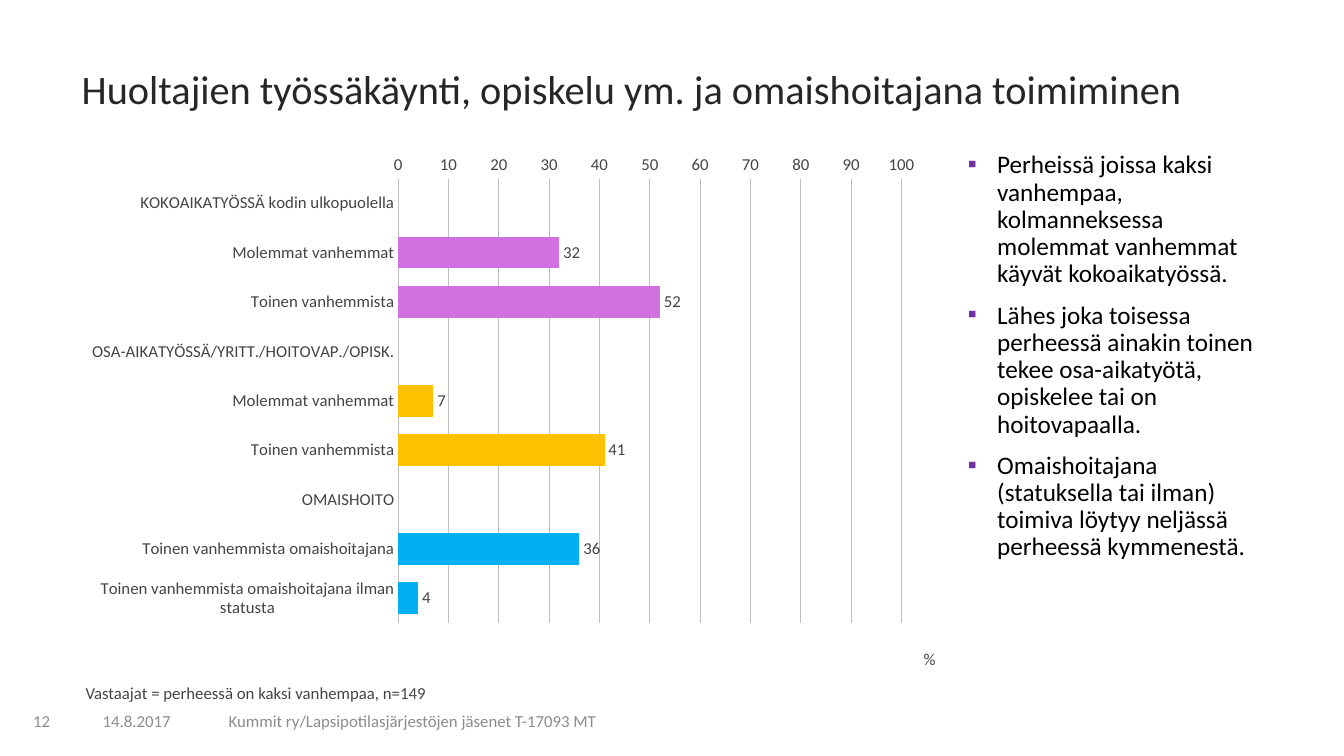
import pptx
import pptx.chart.data
import pptx.dml.color
import pptx.enum.chart
import pptx.enum.text
import pptx.oxml
import pptx.oxml.ns
import pptx.util
from pptx.util import Inches

FONT = "Calibri"
GREY, FOOTER_GREY, BLACK = "444444", "8C8C8C", "000000"
PURPLE, ORCHID, AMBER, BLUE = "7030A0", "D070E1", "FFC000", "00B0F0"
TOP, MIDDLE = pptx.enum.text.MSO_ANCHOR.TOP, pptx.enum.text.MSO_ANCHOR.MIDDLE

# label, percentage, bar colour
ANSWERS = [
    ("KOKOAIKATYÖSSÄ kodin ulkopuolella", None, None),
    ("Molemmat vanhemmat", 32, ORCHID),
    ("Toinen vanhemmista", 52, ORCHID),
    ("OSA-AIKATYÖSSÄ/YRITT./HOITOVAP./OPISK.", None, None),
    ("Molemmat vanhemmat", 7, AMBER),
    ("Toinen vanhemmista", 41, AMBER),
    ("OMAISHOITO", None, None),
    ("Toinen vanhemmista omaishoitajana", 36, BLUE),
    ("Toinen vanhemmista omaishoitajana ilman statusta", 4, BLUE),
]
FINDINGS = [
    "Perheissä joissa kaksi vanhempaa, kolmanneksessa molemmat vanhemmat "
    "käyvät kokoaikatyössä.",
    "Lähes joka toisessa perheessä ainakin toinen tekee osa-aikatyötä, "
    "opiskelee tai on hoitovapaalla.",
    "Omaishoitajana (statuksella tai ilman) toimiva löytyy neljässä "
    "perheessä kymmenestä.",
]


def rgb(color):
    return pptx.dml.color.RGBColor.from_string(color)


def set_font(font, size=12, color=GREY):
    font.name, font.size, font.bold = FONT, pptx.util.Pt(size), False
    font.color.rgb = rgb(color)


def add_bullet(paragraph, color):
    properties = paragraph._p.get_or_add_pPr()
    properties.set("marL", str(Inches(0.29)))
    properties.set("indent", str(-Inches(0.29)))
    ns = pptx.oxml.ns.nsdecls("a")
    for xml in (
        f'<a:buClr {ns}><a:srgbClr val="{color}"/></a:buClr>',
        f'<a:buFont {ns} typeface="{FONT}"/>',
        f'<a:buChar {ns} char="▪"/>',
    ):
        properties.append(pptx.oxml.parse_xml(xml))


def write(shape, *texts, size=12, color=GREY, anchor=TOP, spacing=0.9,
          gap=0, bullet=None):
    """Fill a shape with one formatted paragraph per text."""
    frame = shape.text_frame
    frame.word_wrap = True
    frame.auto_size = pptx.enum.text.MSO_AUTO_SIZE.NONE
    frame.vertical_anchor = anchor
    for index, text in enumerate(texts):
        paragraph = frame.add_paragraph() if index else frame.paragraphs[0]
        if bullet:
            add_bullet(paragraph, bullet)
        paragraph.alignment = pptx.enum.text.PP_ALIGN.LEFT
        paragraph.line_spacing = spacing
        paragraph.space_before = pptx.util.Pt(gap if index else 0)
        run = paragraph.add_run()
        run.text = text
        set_font(run.font, size, color)


def place(shape, left, top, width, height):
    shape.left, shape.top = Inches(left), Inches(top)
    shape.width, shape.height = Inches(width), Inches(height)
    return shape


def add_label(slide, box, text, **text_format):
    label = slide.shapes.add_textbox(*map(Inches, box))
    write(label, text, **text_format)


def set_layout(element, target=None, **fractions):
    """Fix the position of a chart part as fractions of the chart."""
    layout = element.find(pptx.oxml.ns.qn("c:layout"))
    if layout is not None:
        position = element.index(layout)
        element.remove(layout)
    else:
        position = 0
    parts = f'<c:layoutTarget val="{target}"/>' if target else ""
    parts += '<c:xMode val="edge"/><c:yMode val="edge"/>'
    parts += "".join(f'<c:{key} val="{value}"/>' for key, value in fractions.items())
    element.insert(position, pptx.oxml.parse_xml(
        f'<c:layout {pptx.oxml.ns.nsdecls("c")}>'
        f"<c:manualLayout>{parts}</c:manualLayout></c:layout>"))


def style_axis(axis):
    axis.major_tick_mark = pptx.enum.chart.XL_TICK_MARK.NONE
    axis.minor_tick_mark = pptx.enum.chart.XL_TICK_MARK.NONE
    axis.format.line.fill.background()
    set_font(axis.tick_labels.font)


def style_percent_axis(axis):
    style_axis(axis)
    axis.minimum_scale, axis.maximum_scale, axis.major_unit = 0, 100, 10
    axis.has_major_gridlines = True
    gridline = axis.major_gridlines.format.line
    gridline.color.rgb = rgb("BCBEC0")
    gridline.width = pptx.util.Pt(0.5)
    paragraph = axis.axis_title.text_frame.paragraphs[0]
    unit = paragraph.add_run()
    unit.text = "%"
    set_font(unit.font)
    set_layout(axis.axis_title._element, x=0.98, y=0.95)


def style_bars(plot):
    plot.gap_width = 55
    plot.vary_by_categories = False
    bars = plot.series[0]
    bars.invert_if_negative = False
    bars.format.fill.solid()
    bars.format.fill.fore_color.rgb = rgb(ORCHID)
    for index, (_, _, color) in enumerate(ANSWERS):
        if color in (AMBER, BLUE):
            fill = bars.points[index].format.fill
            fill.solid()
            fill.fore_color.rgb = rgb(color)
    labels = bars.data_labels
    labels.show_value = True
    labels.number_format, labels.number_format_is_linked = "#,##0", False
    labels.position = pptx.enum.chart.XL_LABEL_POSITION.OUTSIDE_END
    set_font(labels.font)


def add_answer_chart(slide, box):
    data = pptx.chart.data.CategoryChartData()
    data.categories = [label for label, _, _ in ANSWERS]
    data.add_series("Series 1", [value for _, value, _ in ANSWERS])
    chart = slide.shapes.add_chart(
        pptx.enum.chart.XL_CHART_TYPE.BAR_CLUSTERED, *map(Inches, box), data).chart
    chart.has_legend = False
    chart.has_title = False
    set_font(chart.font, color=BLACK)
    style_axis(chart.category_axis)
    chart.category_axis.reverse_order = True
    chart.category_axis.crosses = pptx.enum.chart.XL_AXIS_CROSSES.MAXIMUM
    style_percent_axis(chart.value_axis)
    style_bars(chart.plots[0])
    plot_area = chart._chartSpace.chart.plotArea
    set_layout(plot_area, target="inner", x=0.377, y=0.06, w=0.581, h=0.849)


def main():
    presentation = pptx.Presentation()
    presentation.slide_width = Inches(13.33)
    presentation.slide_height = Inches(7.5)
    slide = presentation.slides.add_slide(presentation.slide_layouts[1])

    title = place(slide.shapes.title, 0.71, 0.64, 12.07, 0.68)
    write(title, "Huoltajien työssäkäynti, opiskelu ym. ja omaishoitajana toimiminen",
          size=28.8, color="262626")
    add_answer_chart(slide, (0.71, 1.46, 8.6, 5.23))
    findings = place(slide.placeholders[1], 9.5, 1.46, 3.28, 5.23)
    write(findings, *FINDINGS, size=18, color=BLACK, gap=10, bullet=PURPLE)
    add_label(slide, (0.75, 6.75, 5.66, 0.28),
              "Vastaajat = perheessä on kaksi vanhempaa, n=149")

    for left, width, text in (
        (0.23, 0.44, "12"),
        (0.92, 1.01, "14.8.2017"),
        (2.17, 4.56, "Kummit ry/Lapsipotilasjärjestöjen jäsenet T-17093 MT"),
    ):
        add_label(slide, (left, 6.95, width, 0.4), text,
                  color=FOOTER_GREY, anchor=MIDDLE, spacing=1.0)

    presentation.save("out.pptx")


if __name__ == "__main__":
    main()
